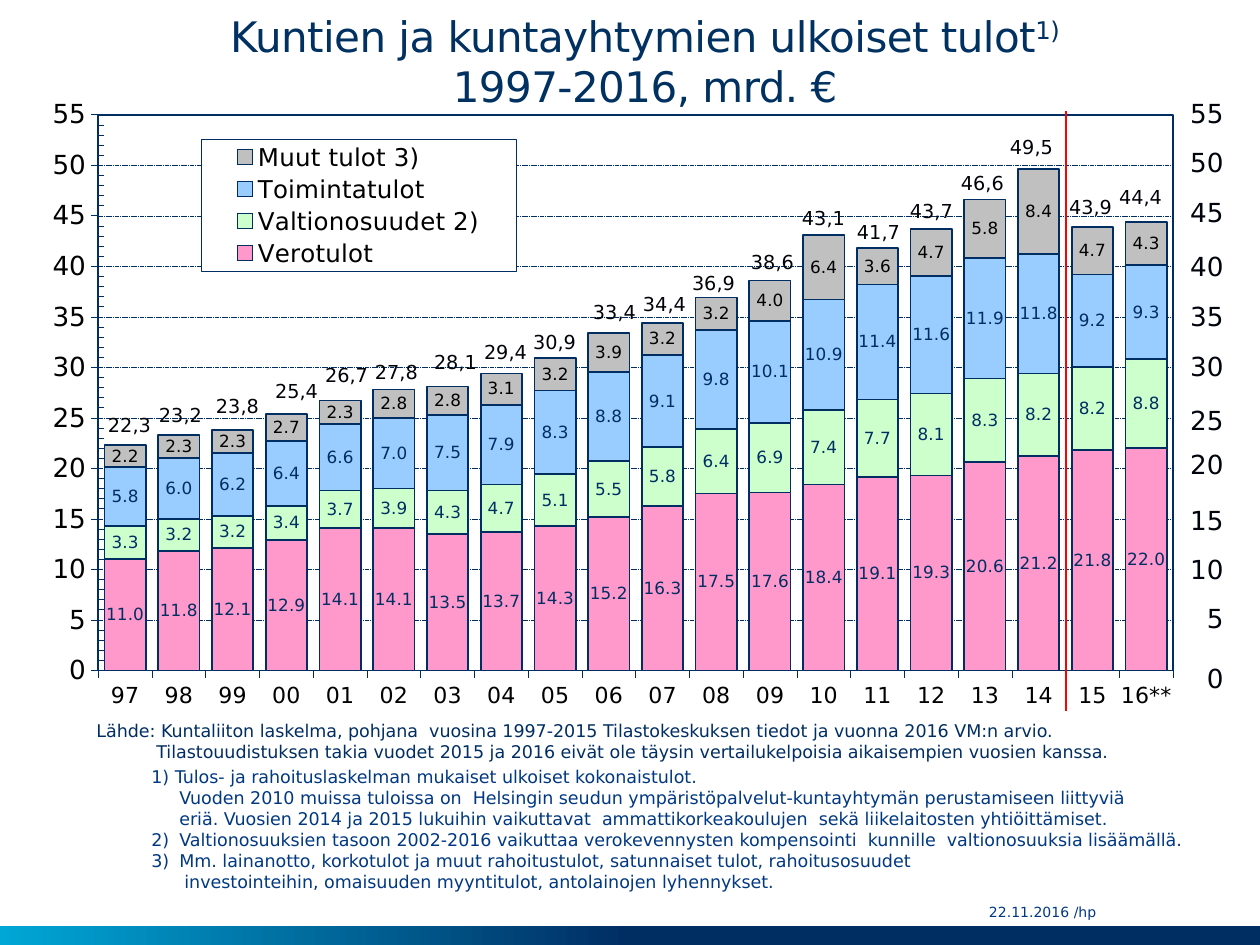
from pptx import Presentation, util as u
from pptx.chart.data import CategoryChartData
from pptx.dml.color import RGBColor
from pptx.enum import chart as charts, dml, shapes, text
from pptx.oxml import parse_xml
from pptx.oxml.ns import nsdecls, qn
from lxml import etree

SCALE = 914400 / 126
FACE = "DejaVu Sans"
COLORS = {"title": "003161", "navy": "002E63", "blue": "003882", "cyan": "00A6D6",
          "scale": "00040C", "total": "000308", "black": "000000", "white": "FFFFFF",
          "red": "FF0000", "pink": "FF99CC", "green": "CCFFCC", "sky": "99CCFF", "grey": "C0C0C0"}

YEARS = ["97", "98", "99", "00", "01", "02", "03", "04", "05", "06",
         "07", "08", "09", "10", "11", "12", "13", "14", "15", "16**"]
SERIES = [
    ("Verotulot", "pink", "navy", [11, 11.8, 12.1, 12.9, 14.1, 14.1, 13.5, 13.7, 14.3, 15.2,
                                   16.3, 17.5, 17.6, 18.4, 19.1, 19.3, 20.6, 21.2, 21.8, 22]),
    ("Valtionosuudet 2)", "green", "navy", [3.3, 3.2, 3.2, 3.4, 3.7, 3.9, 4.3, 4.7, 5.1, 5.5,
                                            5.8, 6.4, 6.9, 7.4, 7.7, 8.1, 8.3, 8.2, 8.2, 8.8]),
    ("Toimintatulot", "sky", "navy", [5.8, 6, 6.2, 6.4, 6.6, 7, 7.5, 7.9, 8.3, 8.8,
                                      9.1, 9.8, 10.1, 10.9, 11.4, 11.6, 11.9, 11.8, 9.2, 9.3]),
    ("Muut tulot 3)", "grey", "black", [2.2, 2.3, 2.3, 2.7, 2.3, 2.8, 2.8, 3.1, 3.2, 3.9,
                                        3.2, 3.2, 4, 6.4, 3.6, 4.7, 5.8, 8.4, 4.7, 4.3]),
]
TOTALS = [("22,3", 95, 407), ("23,2", 146, 397), ("23,8", 203, 388), ("25,4", 262, 373),
          ("26,7", 312, 357), ("27,8", 362, 354), ("28,1", 421, 344), ("29,4", 471, 334),
          ("30,9", 520, 324), ("33,4", 580, 294), ("34,4", 630, 286), ("36,9", 679, 265),
          ("38,6", 738, 244), ("43,1", 789, 200), ("41,7", 844, 214), ("43,7", 897, 193),
          ("46,6", 948, 165), ("49,5", 997, 129), ("43,9", 1056, 189), ("44,4", 1106, 179)]
SCALE_TOPS = [656, 596, 547, 498, 442, 398, 344, 294, 244, 190, 140, 91]
SOURCE = [
    (0, 0, "Lähde: Kuntaliiton laskelma, pohjana  vuosina 1997-2015 Tilastokeskuksen tiedot ja vuonna 2016 VM:n arvio."),
    (60, 0, "Tilastouudistuksen takia vuodet 2015 ja 2016 eivät ole täysin vertailukelpoisia aikaisempien vuosien kanssa."),
]
NOTES = [
    (5, 0, "1) Tulos- ja rahoituslaskelman mukaiset ulkoiset kokonaistulot."),
    (33, 0, "Vuoden 2010 muissa tuloissa on  Helsingin seudun ympäristöpalvelut-kuntayhtymän perustamiseen liittyviä"),
    (33, 0, "eriä. Vuosien 2014 ja 2015 lukuihin vaikuttavat  ammattikorkeakoulujen  sekä liikelaitosten yhtiöittämiset."),
    (33, -28, "2)\tValtionosuuksien tasoon 2002-2016 vaikuttaa verokevennysten kompensointi  kunnille  valtionosuuksia lisäämällä."),
    (33, -28, "3)\tMm. lainanotto, korkotulot ja muut rahoitustulot, satunnaiset tulot, rahoitusosuudet"),
    (38, 0, "investointeihin, omaisuuden myyntitulot, antolainojen lyhennykset."),
]


def px(count):
    return round(count * SCALE)


def color(name):
    return RGBColor.from_string(COLORS[name])


def assign(target, values):
    for name, value in values.items():
        setattr(target, name, value)


def style_font(font, size, name):
    assign(font, {"size": u.Pt(size), "name": FACE, "bold": False})
    font.color.rgb = color(name)


def style_line(line, name, width):
    line.color.rgb = color(name)
    line.width = u.Pt(width)


def add_text(page, box, lines, size, name, align=text.PP_ALIGN.LEFT, **frame_values):
    frame = page.shapes.add_textbox(*map(px, box)).text_frame
    assign(frame, {"word_wrap": True, **frame_values})
    for index, (margin, indent, words) in enumerate(lines):
        para = frame.add_paragraph() if index else frame.paragraphs[0]
        para.text = words
        para.alignment = align
        if margin:
            properties = para._p.get_or_add_pPr()
            properties.set("marL", str(px(margin)))
            properties.set("indent", str(px(indent)))
        style_font(para.font, size, name)
        for span in para.runs:
            style_font(span.font, size, name)


def fill_title(page, box):
    title = page.shapes.title
    assign(title, dict(zip(("left", "top", "width", "height"), map(px, box))))
    frame = title.text_frame
    assign(frame, {"margin_left": 0, "margin_right": 0, "margin_top": px(6), "margin_bottom": px(6),
                   "vertical_anchor": text.MSO_ANCHOR.BOTTOM, "word_wrap": True,
                   "auto_size": text.MSO_AUTO_SIZE.NONE})
    para = frame.paragraphs[0]
    para.alignment = text.PP_ALIGN.CENTER
    for words, baseline in (("Kuntien ja kuntayhtymien ulkoiset tulot", 0), ("1)", 30),
                            ("1997-2016, mrd. €", 0)):
        if words.startswith("1997"):
            para.add_line_break()
        span = para.add_run()
        span.text = words
        style_font(span.font, 24, "title")
        properties = span._r.get_or_add_rPr()
        properties.set("spc", "-30")
        if baseline:
            properties.set("baseline", str(baseline * 1000))


def set_layout(element, place, inner=False):
    x, y, width, height = place
    target = '<c:layoutTarget val="inner"/>' if inner else ""
    layout = parse_xml(
        f'<c:layout {nsdecls("c")}><c:manualLayout>{target}'
        '<c:xMode val="edge"/><c:yMode val="edge"/>'
        f'<c:x val="{x}"/><c:y val="{y}"/><c:w val="{width}"/><c:h val="{height}"/>'
        '</c:manualLayout></c:layout>')
    for old in element.findall(qn("c:layout")):
        element.remove(old)
    if inner:
        element.insert(0, layout)
    else:
        element.find(qn("c:legendPos")).addnext(layout)


def framed(width, fill):
    return parse_xml(f'<c:spPr {nsdecls("c", "a")}>{fill}<a:ln w="{u.Pt(width)}"><a:solidFill>'
                     f'<a:srgbClr val="{COLORS["navy"]}"/></a:solidFill></a:ln></c:spPr>')


def add_income_chart(page, box):
    data = CategoryChartData()
    data.categories = YEARS
    for name, _, _, values in SERIES:
        data.add_series(name, values)
    chart = page.shapes.add_chart(charts.XL_CHART_TYPE.COLUMN_STACKED, *map(px, box), data).chart
    style_font(chart.font, 12, "navy")
    assign(chart, {"has_title": False, "has_legend": True})
    plot = chart.plots[0]
    assign(plot, {"gap_width": 30, "overlap": 100, "vary_by_categories": False})
    for series, (_, fill, label, _) in zip(plot.series, SERIES):
        series.format.fill.solid()
        series.format.fill.fore_color.rgb = color(fill)
        style_line(series.format.line, "navy", 1)
        labels = series.data_labels
        assign(labels, {"show_value": True, "number_format": "0.0", "number_format_is_linked": False})
        style_font(labels.font, 9.6, label)

    tick = charts.XL_TICK_MARK
    assign(chart.value_axis, {"minimum_scale": 0, "maximum_scale": 55, "major_unit": 5, "minor_unit": 1,
                              "major_tick_mark": tick.OUTSIDE, "minor_tick_mark": tick.INSIDE,
                              "has_major_gridlines": True})
    assign(chart.value_axis.tick_labels, {"number_format": "0", "number_format_is_linked": False})
    chart.category_axis.major_tick_mark = tick.OUTSIDE
    for axis, size in ((chart.category_axis, 12.6), (chart.value_axis, 15)):
        style_font(axis.tick_labels.font, size, "black")
        style_line(axis.format.line, "navy", 0.3)
    grid = chart.value_axis.major_gridlines.format.line
    style_line(grid, "navy", 0.25)
    grid.dash_style = dml.MSO_LINE.SQUARE_DOT

    legend = chart.legend
    assign(legend, {"position": charts.XL_LEGEND_POSITION.RIGHT, "include_in_layout": False})
    style_font(legend.font, 14, "black")
    legend_element = legend._element
    set_layout(legend_element, (0.15, 0.07, 0.27, 0.2))
    white = f'<a:solidFill><a:srgbClr val="{COLORS["white"]}"/></a:solidFill>'
    legend_element.find(qn("c:txPr")).addprevious(framed(0.5, white))
    area = chart._chartSpace.chart.plotArea
    set_layout(area, (0.062, 0.033, 0.921, 0.842), inner=True)
    area.append(framed(1, "<a:noFill/>"))


def add_right_scale(page, box):
    left, top, width, height = box
    for index, offset in enumerate(SCALE_TOPS):
        add_text(page, (left, top + offset, width, height), [(0, 0, str(index * 5))], 15, "scale",
                 text.PP_ALIGN.RIGHT, word_wrap=False)


def add_totals(page, box):
    left, top, width, height = box
    for words, across, down in TOTALS:
        add_text(page, (left + across, top + down, width, height), [(0, 0, words)], 11, "total",
                 text.PP_ALIGN.CENTER, word_wrap=False)


def add_break_line(page, box):
    left, top, width, height = box
    line = page.shapes.add_connector(shapes.MSO_CONNECTOR.STRAIGHT, px(left), px(top + height),
                                     px(left + width), px(top))
    style_line(line.line, "red", 1.25)
    etree.SubElement(line._element.spPr, qn("a:effectLst"))


def add_bottom_band(page, box):
    band = page.shapes.add_shape(shapes.MSO_SHAPE.RECTANGLE, *map(px, box))
    band.shadow.inherit = False
    band.line.fill.background()
    band.fill.gradient()
    band.fill.gradient_angle = 180
    for stop, position, name in zip(band.fill.gradient_stops, (0.5, 1), ("navy", "cyan")):
        stop.position = position
        stop.color.rgb = color(name)


def main():
    deck = Presentation()
    assign(deck, {"slide_width": px(1260), "slide_height": px(945)})
    page = deck.slides.add_slide(deck.slide_layouts[5])
    add_bottom_band(page, (0, 926, 1260, 19))
    add_text(page, (989, 903, 187, 17), [(0, 0, "22.11.2016 /hp")], 8, "blue",
             margin_left=0, margin_right=0, margin_top=0, margin_bottom=0,
             vertical_anchor=text.MSO_ANCHOR.MIDDLE)
    fill_title(page, (84, 6, 1122, 111))
    add_income_chart(page, (26, 93, 1167, 660))
    add_right_scale(page, (1177, 0, 59, 44))
    add_totals(page, (0, 0, 69, 37))
    add_text(page, (134, 760, 1090, 140), NOTES, 10, "blue")
    add_text(page, (84, 714, 1076, 55), SOURCE, 10, "navy")
    add_break_line(page, (1066, 111, 0, 600))
    deck.save("out.pptx")


if __name__ == "__main__":
    main()
